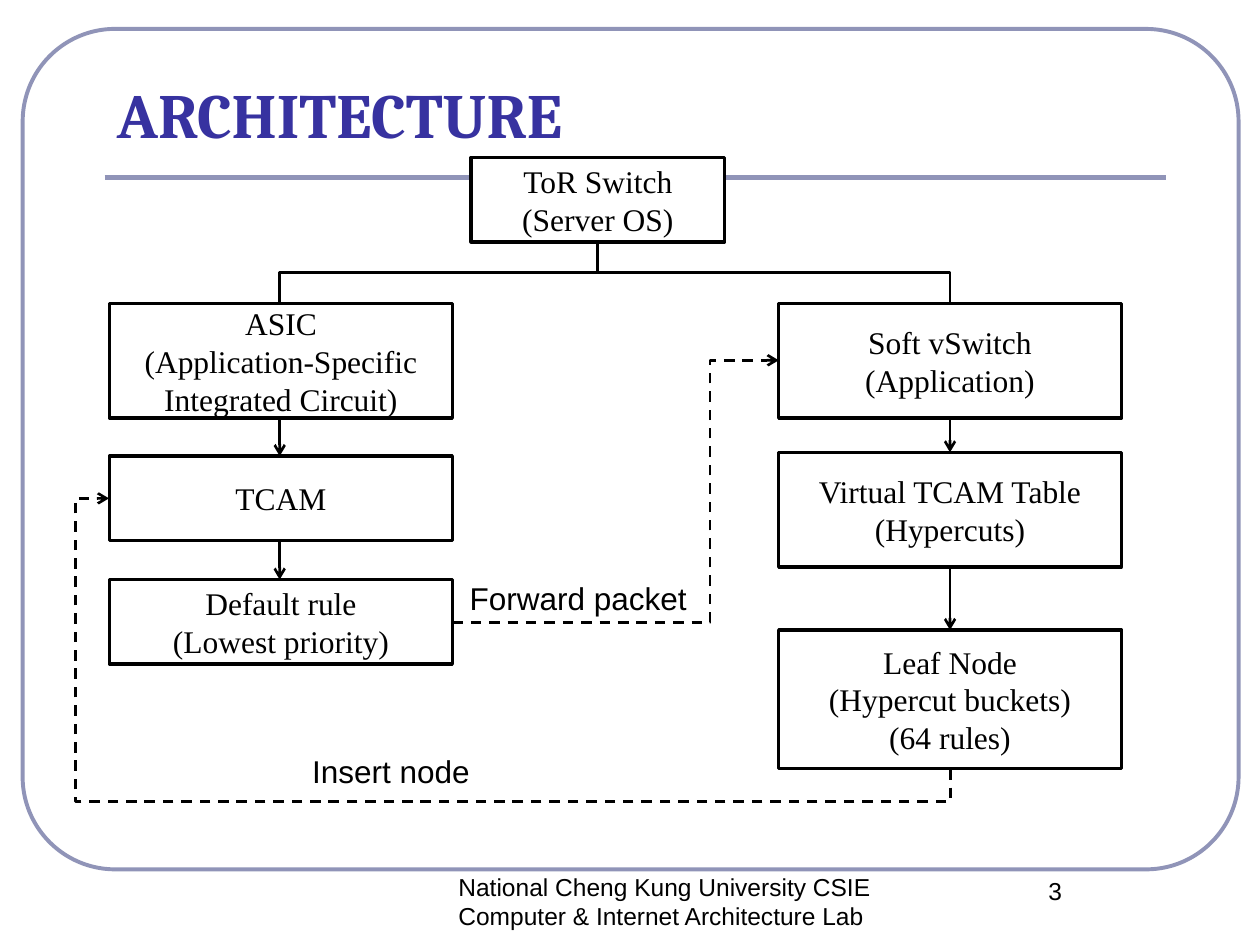
from lxml import etree
from pptx import Presentation
from pptx.dml.color import RGBColor
from pptx.enum.dml import MSO_LINE_DASH_STYLE as DASH
from pptx.enum.shapes import MSO_CONNECTOR as LINK, MSO_SHAPE as SHAPE
from pptx.enum.text import MSO_ANCHOR as ANCHOR, PP_ALIGN as ALIGN
from pptx.oxml.ns import qn
from pptx.util import Inches, Pt

color = RGBColor.from_string
INK, FRAME, TITLE = "000000", "9094B8", "3732A0"

# Grid: two columns of boxes below one top box, in inches
COL_W = 2.72
LEFT, RIGHT = 0.87, 6.18
LEFT_MID, RIGHT_MID, TOP_MID = 2.22, 7.54, 4.74
TOP_ROW, FIRST_ROW = 1.25, 2.41
LOW, TALL, TALLEST = 0.67, 0.91, 1.1

deck = Presentation()
deck.slide_width, deck.slide_height = Inches(10), Inches(7.5)
page = deck.slides.add_slide(deck.slide_layouts[6])


def write(box, text, font, size, align, anchor, ink=INK, bold=False):
    frame = box.text_frame
    frame.text = text
    frame.vertical_anchor = anchor
    for para in frame.paragraphs:
        para.alignment = align
        for span in para.runs:
            span.font.name, span.font.size = font, Pt(size)
            span.font.bold = bold
            span.font.color.rgb = color(ink)


def connect(kind, ends, width=1.5, ink=INK, arrow=False, dash=False,
            turn=0, bends=()):
    line = page.shapes.add_connector(kind, *[Inches(v) for v in ends])
    line.line.color.rgb, line.line.width = color(ink), Pt(width)
    if dash:
        line.line.dash_style = DASH.DASH
    outline = line.line._get_or_add_ln()
    if arrow:
        etree.SubElement(outline, qn("a:tailEnd"), type="arrow")
    props = outline.getparent()
    etree.SubElement(props, qn("a:effectLst"))
    if turn:
        props.find(qn("a:xfrm")).set("rot", str(turn * 60000))
    if bends:
        shape = props.find(qn("a:prstGeom"))
        shape.set("prst", f"bentConnector{len(bends) + 2}")
        guides = shape.find(qn("a:avLst"))
        for number, share in enumerate(bends, 1):
            etree.SubElement(guides, qn("a:gd"), name=f"adj{number}",
                             fmla=f"val {round(share * 100000)}")


# Rounded frame and title rule
border = page.shapes.add_shape(SHAPE.ROUNDED_RECTANGLE, Inches(0.18),
                               Inches(0.23), Inches(9.65), Inches(6.67))
border.adjustments[0] = 0.11
border.shadow.inherit = False
border.fill.background()
border.line.color.rgb, border.line.width = color(FRAME), Pt(2.25)
connect(LINK.STRAIGHT, (0.83, 1.41, 9.25, 1.41), width=3, ink=FRAME)

# Title, footer, page number and arrow labels
texts = [
    ("ARCHITECTURE", 0.83, 0.6, 8.42, 0.65,
     ("Cambria", 36, ALIGN.LEFT, ANCHOR.BOTTOM, TITLE, True), True),
    ("National Cheng Kung University CSIE Computer & Internet Architecture Lab ",
     3.11, 6.87, 4.33, 0.5, ("Arial", 14, ALIGN.CENTER, ANCHOR.TOP), True),
    ("3", 7.5, 6.9, 1.75, 0.5, ("Arial", 14, ALIGN.CENTER, ANCHOR.TOP), True),
    ("Insert node", 2.38, 5.92, 1.46, 0.4,
     ("Arial", 18, ALIGN.LEFT, ANCHOR.TOP), False),
    ("Forward packet", 3.63, 4.55, 1.94, 0.4,
     ("Arial", 18, ALIGN.LEFT, ANCHOR.TOP), False),
]
for text, left, top, width, height, style, wrap in texts:
    box = page.shapes.add_textbox(*[Inches(v) for v in (left, top, width, height)])
    write(box, text, *style)
    box.text_frame.word_wrap = wrap

# Component boxes
components = [
    ("ToR Switch\n(Server OS)", 3.74, TOP_ROW, 2.01, LOW),
    ("ASIC\n(Application-Specific Integrated Circuit)",
     LEFT, FIRST_ROW, COL_W, TALL),
    ("TCAM", LEFT, 3.62, COL_W, LOW),
    ("Default rule\n(Lowest priority)", LEFT, 4.6, COL_W, LOW),
    ("Soft vSwitch\n(Application)", RIGHT, FIRST_ROW, COL_W, TALL),
    ("Virtual TCAM Table\n(Hypercuts)", RIGHT, 3.59, COL_W, TALL),
    ("Leaf Node\n(Hypercut buckets)\n(64 rules)", RIGHT, 5, COL_W, TALLEST),
]
for text, *place in components:
    box = page.shapes.add_shape(SHAPE.RECTANGLE, *[Inches(v) for v in place])
    box.shadow.inherit = False
    box.fill.solid()
    box.fill.fore_color.rgb = color("FFFFFF")
    box.line.color.rgb, box.line.width = color(INK), Pt(2)
    write(box, text, "Times New Roman", 18, ALIGN.CENTER, ANCHOR.MIDDLE)

# Straight arrows down each column
for middle, start, end in [(LEFT_MID, 3.32, 3.62), (LEFT_MID, 4.29, 4.6),
                           (RIGHT_MID, 3.32, 3.59), (RIGHT_MID, 4.5, 5)]:
    connect(LINK.STRAIGHT, (middle, start, middle, end), arrow=True)

# Branches from the top box: ends are given before the quarter turn
drop = FIRST_ROW - TOP_ROW - LOW
branch_y = FIRST_ROW - drop / 2
for middle, turn in [(LEFT_MID, 90), (RIGHT_MID, 270)]:
    center = (TOP_MID + middle) / 2
    half = abs(TOP_MID - middle) / 2
    side = drop / 2 if turn == 90 else -drop / 2
    connect(LINK.ELBOW, (center - side, branch_y - half,
                         center + side, branch_y + half),
            turn=turn, bends=(0.5,))

# Dashed paths: forward packet, then insert node
connect(LINK.ELBOW, (LEFT + COL_W, 4.94, RIGHT, 2.86),
        arrow=True, dash=True, bends=(0.79,))
connect(LINK.ELBOW, (5.28, 1.69, 3.13, 8.37), arrow=True, dash=True,
        turn=90, bends=(-0.12, 1.04))

deck.save("out.pptx")
